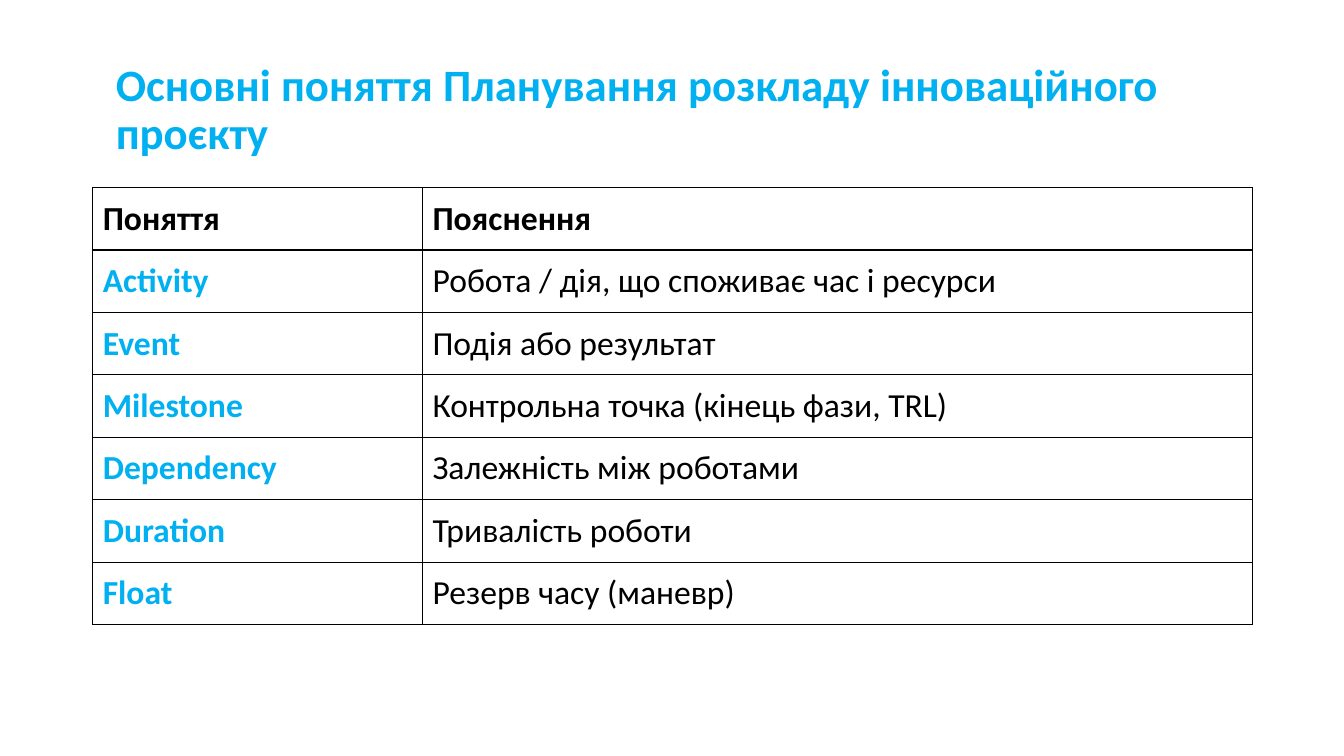
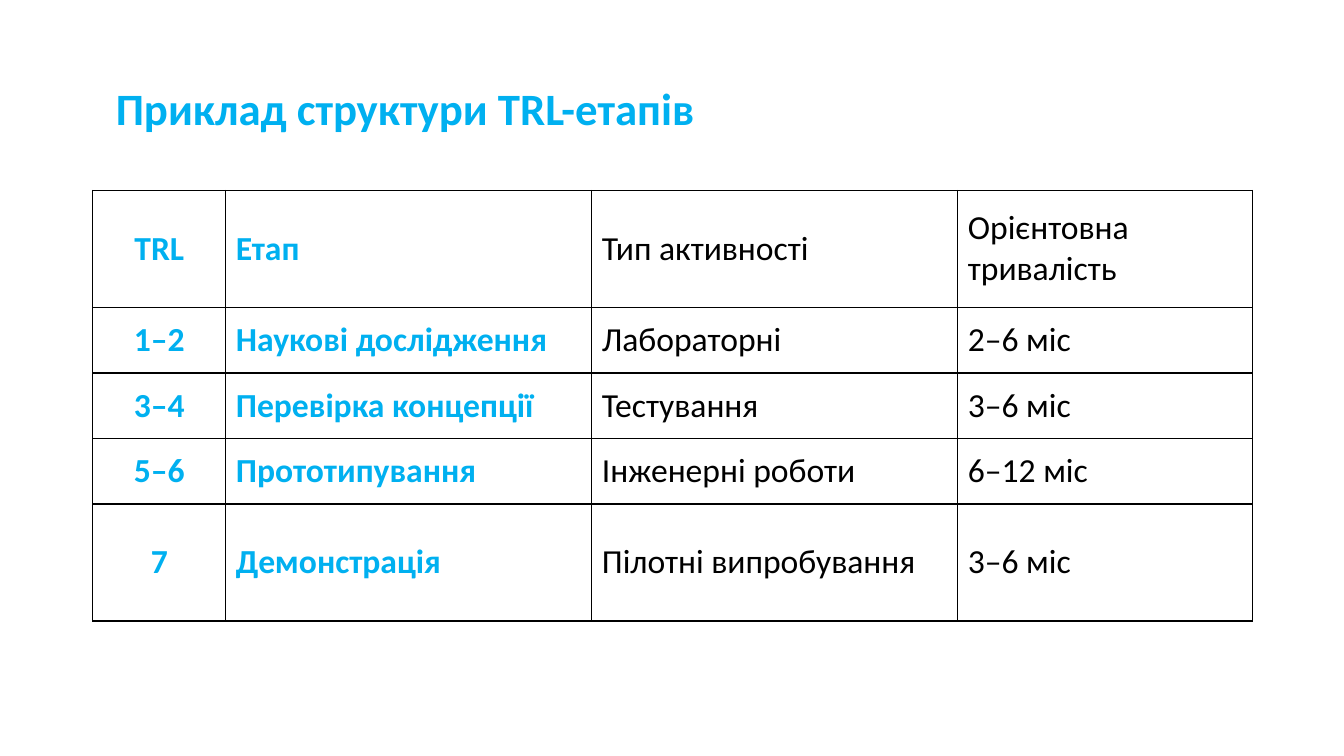
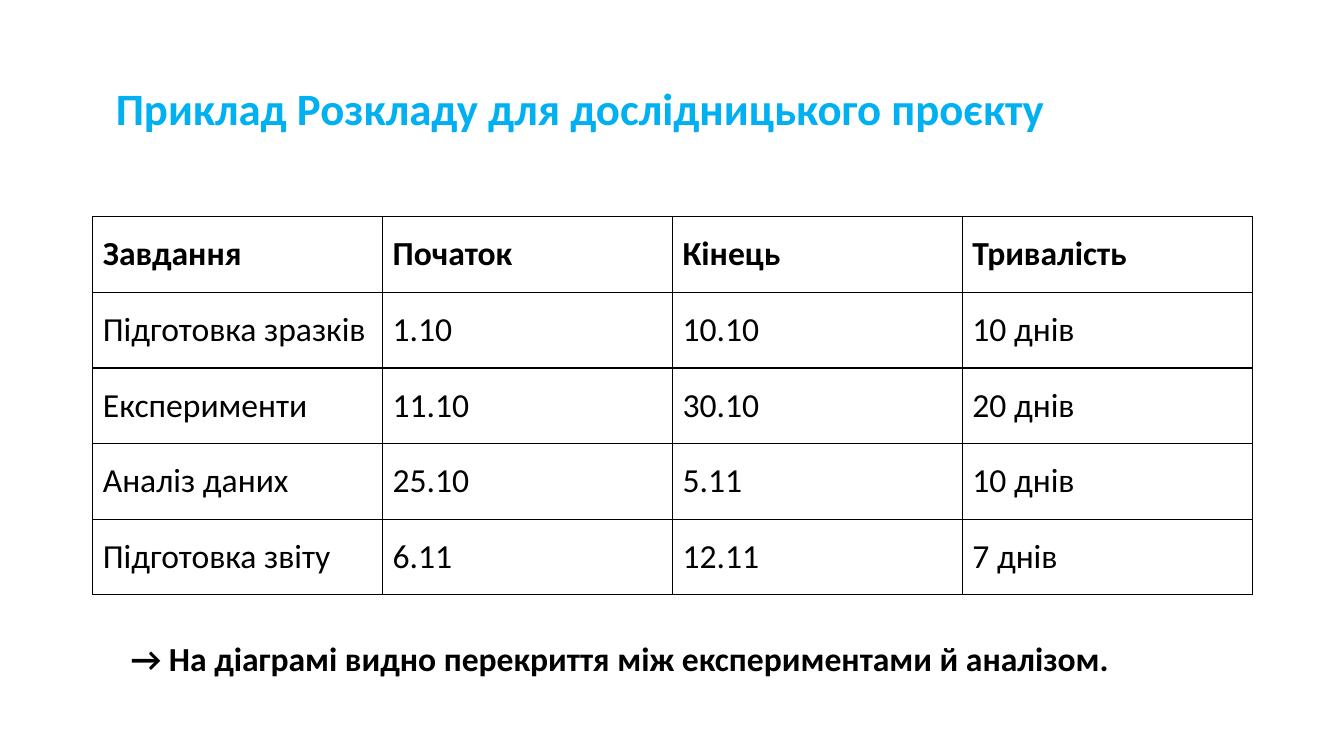
import pptx
import pptx.util
import pptx.dml.color
import pptx.enum.text
import pptx.oxml
import pptx.oxml.ns

Inches = pptx.util.Inches
Pt = pptx.util.Pt
RGBColor = pptx.dml.color.RGBColor
MIDDLE = pptx.enum.text.MSO_ANCHOR.MIDDLE
ALIGN = pptx.enum.text.PP_ALIGN

BLUE = RGBColor(0x00, 0xB0, 0xF0)
BLACK = RGBColor(0x00, 0x00, 0x00)
FONT = "Calibri"

TITLE = {"size": Pt(32), "bold": True, "color": BLUE}
STRONG = {"size": Pt(24), "bold": True, "color": BLACK}
KEY = {"size": Pt(24), "bold": True, "color": BLUE}
BODY = {"size": Pt(24), "bold": False, "color": BLACK}

TITLE_BOX = (1.05, 0.55, 11.5, 1.1)
NOTE_BOX = (1.2, 6.13, 11.73, 0.84)
TABLE_LEFT = 0.92

CONCEPTS = [
    ("Поняття", "Пояснення"),
    ("Activity", "Робота / дія, що споживає час і ресурси"),
    ("Event", "Подія або результат"),
    ("Milestone", "Контрольна точка (кінець фази, TRL)"),
    ("Dependency", "Залежність між роботами"),
    ("Duration", "Тривалість роботи"),
    ("Float", "Резерв часу (маневр)"),
]
STAGES = [
    ("TRL", "Етап", "Тип активності", "Орієнтовна тривалість"),
    ("1–2", "Наукові дослідження", "Лабораторні", "2–6 міс"),
    ("3–4", "Перевірка концепції", "Тестування", "3–6 міс"),
    ("5–6", "Прототипування", "Інженерні роботи", "6–12 міс"),
    ("7", "Демонстрація", "Пілотні випробування", "3–6 міс"),
]
SCHEDULE = [
    ("Завдання", "Початок", "Кінець", "Тривалість"),
    ("Підготовка зразків", "1.10", "10.10", "10 днів"),
    ("Експерименти", "11.10", "30.10", "20 днів"),
    ("Аналіз даних", "25.10", "5.11", "10 днів"),
    ("Підготовка звіту", "6.11", "12.11", "7 днів"),
]


def write(p, text, style):
    r = p.add_run()
    r.text = text
    r.font.name = FONT
    for name, value in style.items():
        if name == "color":
            r.font.color.rgb = value
        else:
            setattr(r.font, name, value)


def add_text(slide, box, text, style):
    tf = slide.shapes.add_textbox(*map(Inches, box)).text_frame
    tf.word_wrap = True
    tf.vertical_anchor = MIDDLE
    p = tf.paragraphs[0]
    p.line_spacing = 0.9
    write(p, text, style)


def add_borders(cell):
    tc_pr = cell._tc.get_or_add_tcPr()
    ns = pptx.oxml.ns.nsdecls("a")
    for i, side in enumerate(("lnL", "lnR", "lnT", "lnB")):
        tc_pr.insert(i, pptx.oxml.parse_xml(
            f'<a:{side} {ns} w="{Pt(1)}"><a:solidFill>'
            f'<a:srgbClr val="{BLACK}"/></a:solidFill></a:{side}>'))


def add_grid(slide, top, widths, heights, rows, strong_header=False,
             key_cols=0, centred_cols=0):
    box = (TABLE_LEFT, top, sum(widths), sum(heights))
    table = slide.shapes.add_table(
        len(heights), len(widths), *map(Inches, box)).table
    table.first_row = table.horz_banding = False
    for col, width in zip(table.columns, widths):
        col.width = Inches(width)
    for row, height in zip(table.rows, heights):
        row.height = Inches(height)
    for i, values in enumerate(rows):
        for j, text in enumerate(values):
            cell = table.cell(i, j)
            cell.fill.background()
            cell.vertical_anchor = MIDDLE
            add_borders(cell)
            p = cell.text_frame.paragraphs[0]
            if j < centred_cols:
                p.alignment = ALIGN.CENTER
            if strong_header and i == 0:
                style = STRONG
            else:
                style = KEY if j < key_cols else BODY
            write(p, text, style)


def add_table_slide(prs, title, **grid):
    slide = prs.slides.add_slide(prs.slide_layouts[6])
    add_text(slide, TITLE_BOX, title, TITLE)
    add_grid(slide, **grid)
    return slide


def main():
    prs = pptx.Presentation()
    prs.slide_width = Inches(13.33)
    prs.slide_height = Inches(7.5)

    add_table_slide(
        prs, "Основні поняття Планування розкладу інноваційного проєкту",
        top=1.86, widths=[3.27, 8.23], heights=[0.62] * 7,
        rows=CONCEPTS, strong_header=True, key_cols=1)
    add_table_slide(
        prs, "Приклад структури TRL-етапів",
        top=1.89, widths=[1.32, 3.63, 3.63, 2.92],
        heights=[1.16, 0.65, 0.65, 0.65, 1.16],
        rows=STAGES, key_cols=2, centred_cols=1)
    slide = add_table_slide(
        prs, "Приклад Розкладу для дослідницького проєкту",
        top=2.15, widths=[11.5 / 4] * 4, heights=[0.75] * 5,
        rows=SCHEDULE, strong_header=True)
    add_text(slide, NOTE_BOX,
             "→ На діаграмі видно перекриття між експериментами й аналізом.",
             STRONG)

    prs.save("out.pptx")


if __name__ == "__main__":
    main()
